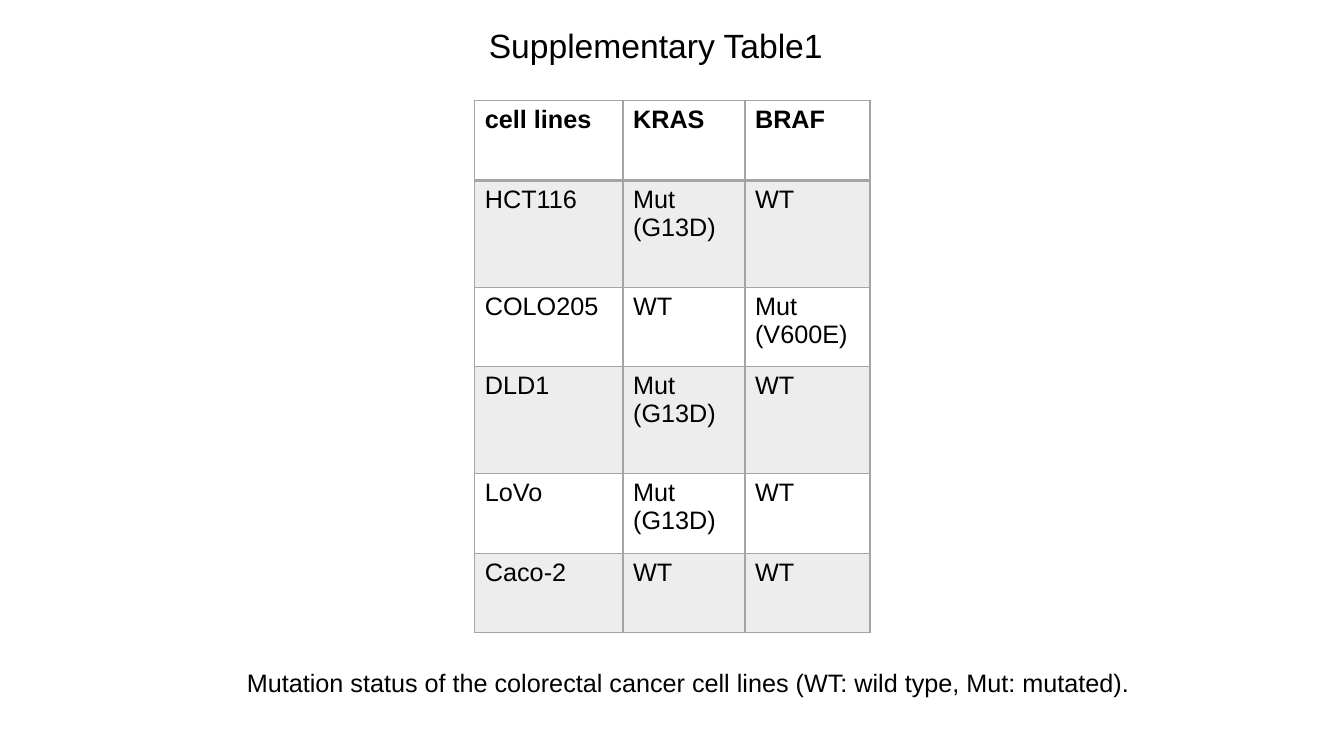
from lxml import etree
from pptx import Presentation
from pptx import util as u
from pptx.dml.color import RGBColor
from pptx.oxml import ns

BLACK = RGBColor(0x00, 0x00, 0x00)
GRID_GRAY = RGBColor(0xA5, 0xA5, 0xA5)
BAND_GRAY = RGBColor(0xED, 0xED, 0xED)

COLUMN_WIDTHS = [1.47, 1.21, 1.24]
ROW_HEIGHTS = [0.79, 1.06, 0.79, 1.06, 0.79, 0.79]
MUTATIONS = [
    ["cell lines", "KRAS", "BRAF"],
    ["HCT116", "Mut\n(G13D)", "WT"],
    ["COLO205", "WT", "Mut\n(V600E)"],
    ["DLD1", "Mut\n(G13D)", "WT"],
    ["LoVo", "Mut\n(G13D)", "WT"],
    ["Caco-2", "WT", "WT"],
]


class SlideBuilder:
    """Draws styled text and tables on one slide."""

    font_name = "Arial"
    body_size = 18

    def __init__(self, slide):
        self.slide = slide

    def style(self, frame, size, bold=False):
        for paragraph in frame.paragraphs:
            font = paragraph.font
            font.name, font.size, font.bold = self.font_name, u.Pt(size), bold
            font.color.rgb = BLACK

    def text(self, content, left, top, width, height, size=body_size):
        shape = self.slide.shapes.add_textbox(*map(u.Inches, (left, top, width, height)))
        shape.text_frame.word_wrap = True
        shape.text_frame.text = content
        self.style(shape.text_frame, size)

    def border(self, cell, side, points):
        properties = cell._tc.get_or_add_tcPr()
        line = etree.SubElement(properties, ns.qn(f"a:ln{side}"), w=str(u.Pt(points)))
        fill = etree.SubElement(line, ns.qn("a:solidFill"))
        etree.SubElement(fill, ns.qn("a:srgbClr"), val=str(GRID_GRAY))

    def cell(self, cell, content, row):
        cell.text = content
        self.style(cell.text_frame, self.body_size, bold=row == 0)
        for side in "LRTB":
            header_rule = (row, side) in ((0, "B"), (1, "T"))
            self.border(cell, side, 2 if header_rule else 1)
        if row % 2:
            cell.fill.solid()
            cell.fill.fore_color.rgb = BAND_GRAY
        else:
            cell.fill.background()

    def table(self, rows, left, top, widths, heights):
        frame = self.slide.shapes.add_table(
            len(rows), len(widths), u.Inches(left), u.Inches(top),
            u.Inches(sum(widths)), u.Inches(sum(heights)))
        table = frame.table
        table.horz_banding = False
        for column, width in zip(table.columns, widths):
            column.width = u.Inches(width)
        for index, (contents, height) in enumerate(zip(rows, heights)):
            table.rows[index].height = u.Inches(height)
            for position, content in enumerate(contents):
                self.cell(table.cell(index, position), content, index)


def main():
    presentation = Presentation()
    presentation.slide_width = u.Inches(13.33)
    presentation.slide_height = u.Inches(7.5)
    builder = SlideBuilder(presentation.slides.add_slide(presentation.slide_layouts[6]))
    builder.text("Supplementary Table1", 4.75, 0.2, 3.7, 0.5, size=24)
    builder.table(MUTATIONS, 4.71, 1, COLUMN_WIDTHS, ROW_HEIGHTS)
    builder.text(
        "Mutation status of the colorectal cancer cell lines (WT: wild type, Mut: mutated).",
        2.35, 6.57, 9.52, 0.4)
    presentation.save("out.pptx")


if __name__ == "__main__":
    main()
